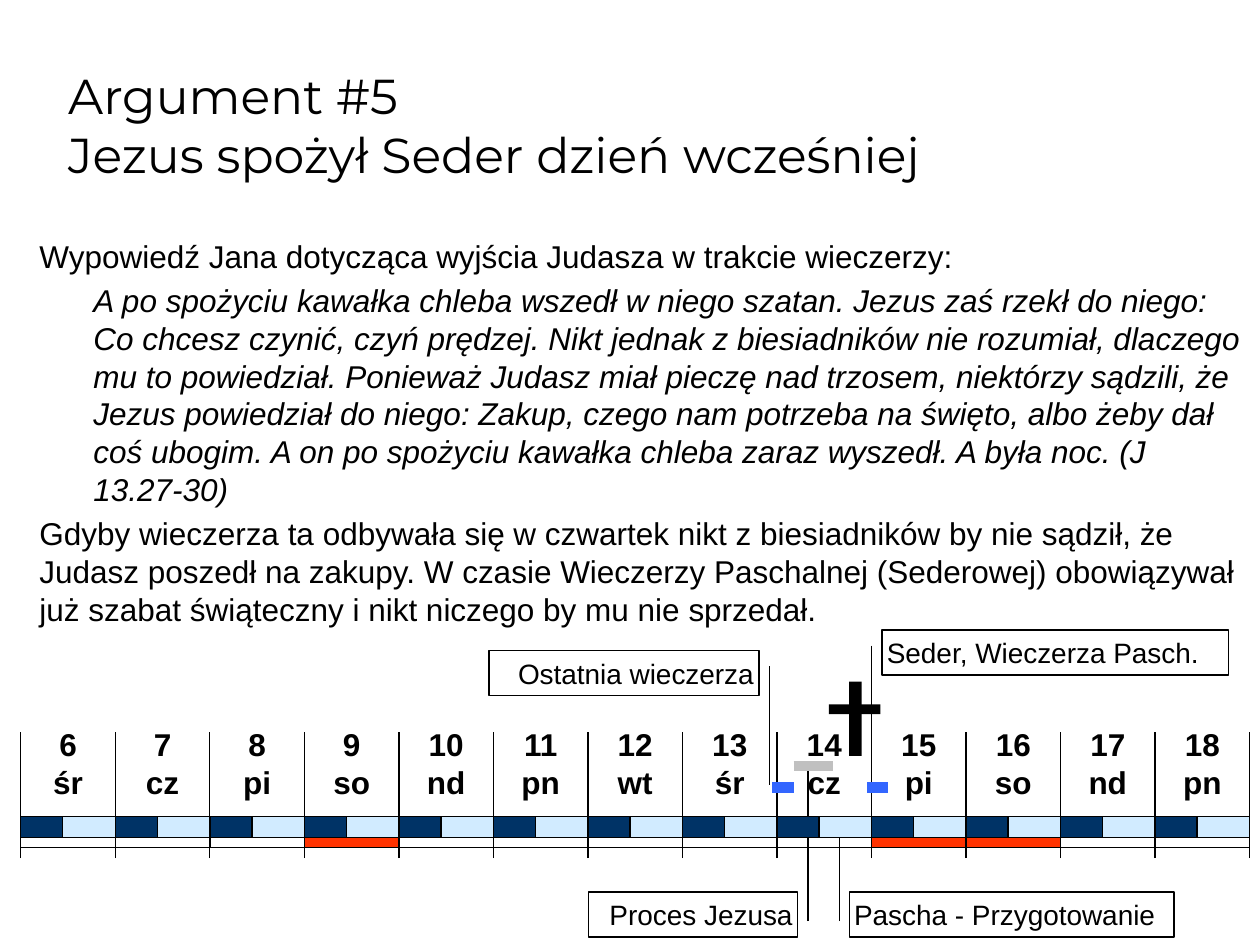
import pptx
import pptx.dml.color
import pptx.enum.shapes
import pptx.enum.text
import pptx.oxml
import pptx.util
from pptx.util import Cm

RECTANGLE = pptx.enum.shapes.MSO_SHAPE.RECTANGLE
CALLOUT = pptx.enum.shapes.MSO_SHAPE.LINE_CALLOUT_1
ALIGN = pptx.enum.text.PP_ALIGN
ANCHOR = pptx.enum.text.MSO_ANCHOR
AUTO_SIZE = pptx.enum.text.MSO_AUTO_SIZE
BLACK, NIGHT, DAY, SABBATH = "000000", "003366", "D1EBFF", "FF3300"
SUPPER, TRIAL = "3366FF", "C0C0C0"
WEEKDAYS = ["śr", "cz", "pi", "so", "nd", "pn", "wt"]
FIRST_DATE, LAST_DATE = 6, 18
SABBATH_DATES = {9, 15, 16}

HEADING = "Argument #5\vJezus spożył Seder dzień wcześniej"
ARGUMENT = [
    (0, "Wypowiedź Jana dotycząca wyjścia Judasza w trakcie wieczerzy:"),
    (1, "A po spożyciu kawałka chleba wszedł w niego szatan. Jezus zaś rzekł do niego: "
        "Co chcesz czynić, czyń prędzej. Nikt jednak z biesiadników nie rozumiał, dlaczego "
        "mu to powiedział. Ponieważ Judasz miał pieczę nad trzosem, niektórzy sądzili, że "
        "Jezus powiedział do niego: Zakup, czego nam potrzeba na święto, albo żeby dał coś "
        "ubogim. A on po spożyciu kawałka chleba zaraz wyszedł. A była noc. (J 13.27‑30)"),
    (0, "Gdyby wieczerza ta odbywała się w czwartek nikt z biesiadników by nie sądził, że "
        "Judasz poszedł na zakupy. W czasie Wieczerzy Paschalnej (Sederowej) obowiązywał "
        "już szabat świąteczny i nikt niczego by mu nie sprzedał."),
]
LOWER_CALLOUTS = [
    ("Proces Jezusa", (11.86, 17.98, 4.22, 0.91), ALIGN.RIGHT, (0.65, -0.05, -2.8, -0.05)),
    ("Pascha - Przygotowanie", (17.12, 17.98, 6.55, 0.91), ALIGN.LEFT, (0.65, 1.03, -1.48, 1.03)),
]
UPPER_CALLOUTS = [
    ("Ostatnia wieczerza", (9.86, 13.11, 5.44, 0.91), ALIGN.RIGHT, (0.35, -0.04, 2.99, -0.04)),
    ("Seder, Wieczerza Pasch.", (17.78, 12.7, 6.98, 0.91), ALIGN.LEFT, (0.35, 1.03, 3.42, 1.03)),
]


def rgb(code):
    """Return the colour for a hex string."""
    return pptx.dml.color.RGBColor.from_string(code)


def format_text(paragraph, size, font="Arial", bold=False, italic=False):
    """Format every run of a paragraph in black."""
    for run in paragraph.runs:
        run.font.name = font
        run.font.size = pptx.util.Pt(size)
        run.font.bold = bold
        run.font.italic = italic
        run.font.color.rgb = rgb(BLACK)


def place(placeholder, box):
    """Move a placeholder to a box given in centimetres."""
    placeholder.left, placeholder.top, placeholder.width, placeholder.height = map(Cm, box)


def add_block(shapes, box, fill=None, outlined=True, kind=RECTANGLE):
    """Add a flat shape with an optional fill and thin outline."""
    block = shapes.add_shape(kind, *map(Cm, box))
    block.shadow.inherit = False
    if fill:
        block.fill.solid()
        block.fill.fore_color.rgb = rgb(fill)
    else:
        block.fill.background()
    if outlined:
        block.line.color.rgb = rgb(BLACK)
        block.line.width = pptx.util.Pt(0.75)
    else:
        block.line.fill.background()
    return block


def add_line(shapes, start, end, color=BLACK, width=0.75):
    """Add a straight line without a shadow."""
    line = shapes.add_connector(
        pptx.enum.shapes.MSO_CONNECTOR.STRAIGHT, *map(Cm, start + end))
    line.line.color.rgb = rgb(color)
    line.line.width = pptx.util.Pt(width)
    properties = line._element.spPr
    properties.append(pptx.oxml.parse_xml(
        '<a:effectLst xmlns:a="http://schemas.openxmlformats.org/drawingml/2006/main"/>'))


def fill_title(title, box):
    """Set the two-line heading."""
    place(title, box)
    frame = title.text_frame
    frame.text = HEADING
    frame.auto_size = AUTO_SIZE.NONE
    frame.vertical_anchor = ANCHOR.BOTTOM
    frame.paragraphs[0].alignment = ALIGN.LEFT
    format_text(frame.paragraphs[0], 28, "Montserrat")


def fill_argument(body, box):
    """Set the argument with its indented quotation."""
    place(body, box)
    frame = body.text_frame
    frame.text = "\n".join(text for _, text in ARGUMENT)
    frame.auto_size = AUTO_SIZE.NONE
    for index, (paragraph, (level, _)) in enumerate(zip(frame.paragraphs, ARGUMENT)):
        paragraph.level = level
        properties = paragraph._p.get_or_add_pPr()
        properties.set("marL", str(Cm(2.06 if level else 0.97)))
        properties.set("indent", "0")
        properties.append(pptx.oxml.parse_xml(
            '<a:buNone xmlns:a="http://schemas.openxmlformats.org/drawingml/2006/main"/>'))
        paragraph.space_before = pptx.util.Pt(3.6 if index else 0)
        format_text(paragraph, 18, italic=level == 1)


def add_callout(shapes, text, box, alignment, leader):
    """Add a framed note with a vertical leader line."""
    callout = add_block(shapes, box, kind=CALLOUT)
    callout._element.spPr.xfrm.set("flipH", "1")
    for index, value in enumerate(leader):
        callout.adjustments[index] = value
    frame = callout.text_frame
    frame.text = text
    frame.word_wrap = True
    frame.auto_size = AUTO_SIZE.SHAPE_TO_FIT_TEXT
    frame.vertical_anchor = ANCHOR.MIDDLE
    frame.margin_left = frame.margin_right = frame.margin_top = frame.margin_bottom = Cm(0.1)
    frame.paragraphs[0].alignment = alignment
    format_text(frame.paragraphs[0], 16)


def add_calendar(slide, box):
    """Draw the days with night and day halves and the sabbath strip."""
    left, top, width, height = box
    shapes = slide.shapes.add_group_shape().shapes
    dates = range(FIRST_DATE, LAST_DATE + 1)
    day_width = width / len(dates)
    night_width = day_width * 4 / 9
    for index, date in enumerate(dates):
        x = left + index * day_width
        add_block(shapes, (x, top + 2.13, night_width, 0.43), NIGHT)
        add_block(shapes, (x + night_width, top + 2.13, day_width - night_width, 0.43), DAY)
        add_block(shapes, (x, top + 2.56, day_width, 0.2),
                  SABBATH if date in SABBATH_DATES else None)
        label = shapes.add_textbox(*map(Cm, (x, top, day_width, 2.11))).text_frame
        label.text = f"{date}\v{WEEKDAYS[index % len(WEEKDAYS)]}"
        label.word_wrap = False
        label.vertical_anchor = ANCHOR.MIDDLE
        label.paragraphs[0].alignment = ALIGN.CENTER
        format_text(label.paragraphs[0], 18, bold=True)
    for index in range(len(dates) + 1):
        x = left + index * day_width
        add_line(shapes, (x, top + height), (x, top + 0.43))


def add_cross(slide, box):
    """Draw the cross that marks the crucifixion."""
    left, top, width, height = box
    shapes = slide.shapes.add_group_shape().shapes
    add_block(shapes, (left + 0.41, top, 0.25, height), BLACK, outlined=False)
    add_block(shapes, (left, top + 0.46, width, 0.2), BLACK, outlined=False)


def main():
    """Build the slide and save it."""
    presentation = pptx.Presentation()
    presentation.slide_width, presentation.slide_height = Cm(25.4), Cm(19.05)
    slide = presentation.slides.add_slide(presentation.slide_layouts[1])
    fill_title(slide.shapes.title, (1.12, 0.64, 24.28, 3.18))
    fill_argument(slide.placeholders[1], (-0.43, 4.65, 25.83, 8.69))
    for callout in LOWER_CALLOUTS:
        add_callout(slide.shapes, *callout)
    add_line(slide.shapes, (16, 15.44), (16.79, 15.44), TRIAL, 6)
    add_calendar(slide, (0.42, 14.33, 24.77, 2.97))
    for callout in UPPER_CALLOUTS:
        add_callout(slide.shapes, *callout)
    for x in (15.57, 17.48):
        add_line(slide.shapes, (x, 15.88), (x + 0.43, 15.88), SUPPER, 6)
    add_cross(slide, (16.71, 13.74, 1.04, 1.5))
    presentation.save("out.pptx")


if __name__ == "__main__":
    main()
